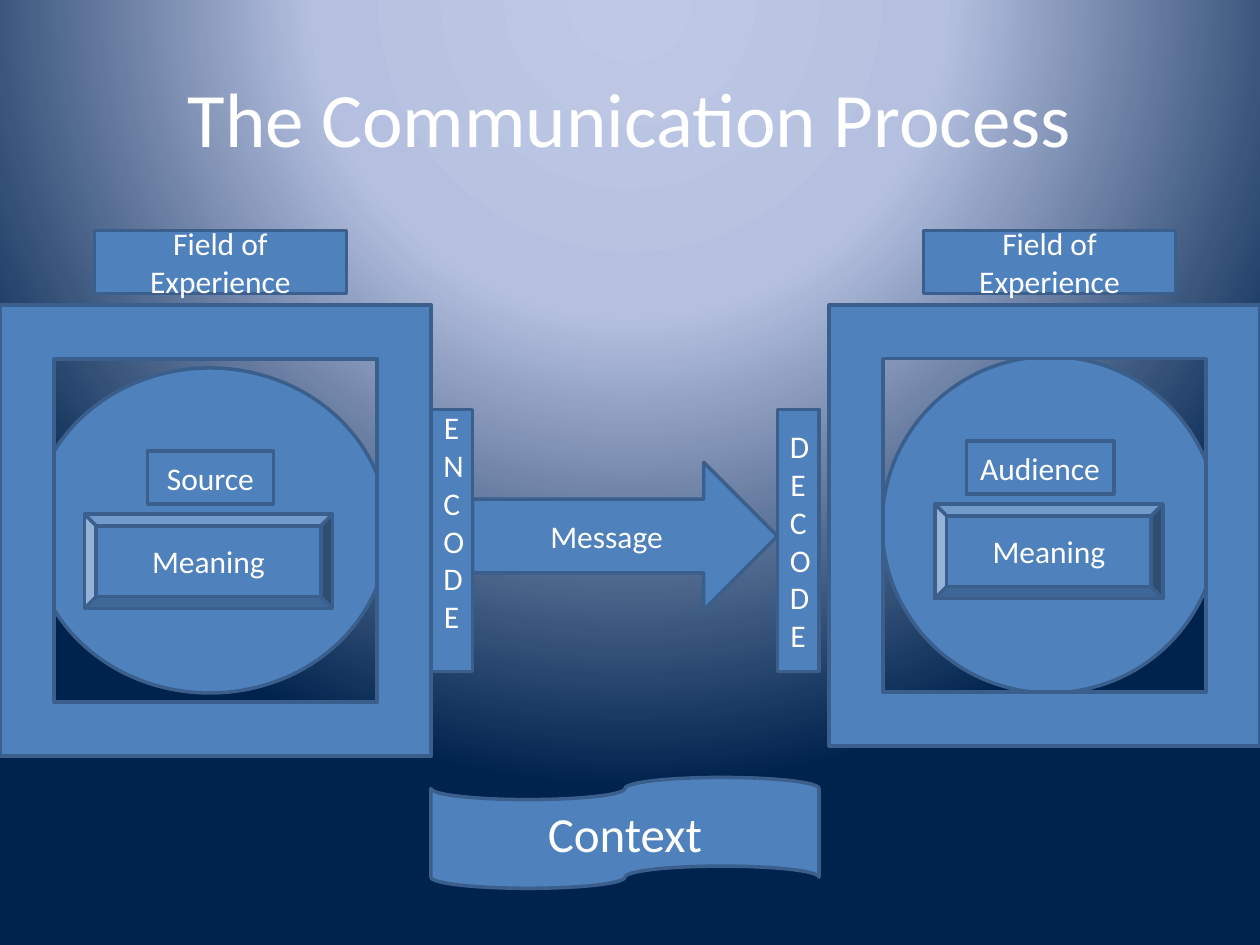
from pptx import Presentation
from pptx.dml.color import RGBColor
from pptx.enum.shapes import MSO_SHAPE
from pptx.enum.text import MSO_ANCHOR, PP_ALIGN
from pptx.oxml import parse_xml
from pptx.oxml.ns import nsdecls
from pptx.util import Inches, Pt

COLORS = {"fill": "4F81BD", "line": "3A5F8C", "text": "FFFFFF",
          "glow": "BFC9E5", "haze": "B5C0E0", "navy": "00234D"}
STOPS = [(0, "glow"), (40, "haze"), (100, "navy")]
TITLE = ("The Communication Process", (0.5, 0.3, 9, 1.25))
BOX = MSO_SHAPE.FLOWCHART_PROCESS
SHAPES = [
    (MSO_SHAPE.OVAL, (0.25, 2.92, 2.83, 2.58), "", {}),
    (MSO_SHAPE.FLOWCHART_CONNECTOR, (7, 2.83, 2.67, 2.67), "", {}),
    (BOX, (1.17, 3.58, 1, 0.42), "Source", {}),
    (BOX, (7.67, 3.5, 1.17, 0.42), "Audience", {}),
    (MSO_SHAPE.BEVEL, (0.67, 4.08, 1.97, 0.75), "Meaning", {}),
    (MSO_SHAPE.RIGHT_ARROW, (3.75, 3.67, 2.42, 1.17), "Message", {}),
    (MSO_SHAPE.BEVEL, (7.42, 4, 1.81, 0.75), "Meaning", {}),
    (BOX, (3.42, 3.25, 0.33, 2.08), "\n".join("ENCODE"), {"bottom": 0.35}),
    (MSO_SHAPE.FRAME, (0, 2.42, 3.42, 3.58), "", {}),
    (MSO_SHAPE.RECTANGLE, (0.75, 1.83, 2, 0.5), "Field of Experience", {}),
    (MSO_SHAPE.RECTANGLE, (6.17, 3.25, 0.33, 2.08), "\n".join("DECODE"), {}),
    (MSO_SHAPE.FRAME, (6.58, 2.42, 3.42, 3.5), "", {}),
    (BOX, (7.33, 1.83, 2, 0.5), "Field of Experience", {}),
    (MSO_SHAPE.FLOWCHART_PUNCHED_TAPE, (3.42, 6.17, 3.08, 0.88), "Context", {"size": 28}),
]


def rgb(name):
    return RGBColor.from_string(COLORS[name])


def write(sp, text, size=18, bottom=0.05):
    tf = sp.text_frame
    tf.word_wrap = True
    tf.vertical_anchor = MSO_ANCHOR.MIDDLE
    tf.margin_bottom = Inches(bottom)
    tf.text = text
    for p in tf.paragraphs:
        p.alignment = PP_ALIGN.CENTER
        p.font.size = Pt(size)
        for r in p.runs:
            r.font.name = "Calibri"
            r.font.size = Pt(size)
            r.font.color.rgb = rgb("text")


def add_shape(s, kind, place, text, style):
    sp = s.shapes.add_shape(kind, *map(Inches, place))
    sp.shadow.inherit = False
    sp.fill.solid()
    sp.fill.fore_color.rgb = rgb("fill")
    sp.line.color.rgb = rgb("line")
    sp.line.width = Pt(2)
    if text:
        write(sp, text, **style)


def set_background(s):
    s.background.fill.solid()
    stops = "".join(f'<a:gs pos="{pos * 1000}"><a:srgbClr val="{COLORS[c]}"/></a:gs>'
                    for pos, c in STOPS)
    grad = parse_xml(
        f'<a:gradFill {nsdecls("a")} rotWithShape="1"><a:gsLst>{stops}</a:gsLst>'
        '<a:path path="circle"><a:fillToRect l="50000" t="-80000" r="50000" b="180000"/>'
        '</a:path></a:gradFill>')
    bg = s.element.cSld.bg.bgPr
    bg.replace(bg[0], grad)


def main():
    """Build the communication process slide."""
    prs = Presentation()
    prs.slide_width, prs.slide_height = Inches(10), Inches(7.5)
    s = prs.slides.add_slide(prs.slide_layouts[5])
    set_background(s)
    text, place = TITLE
    title = s.shapes.title
    title.left, title.top, title.width, title.height = map(Inches, place)
    write(title, text, size=44)
    for shape in SHAPES:
        add_shape(s, *shape)
    prs.save("out.pptx")


if __name__ == "__main__":
    main()
